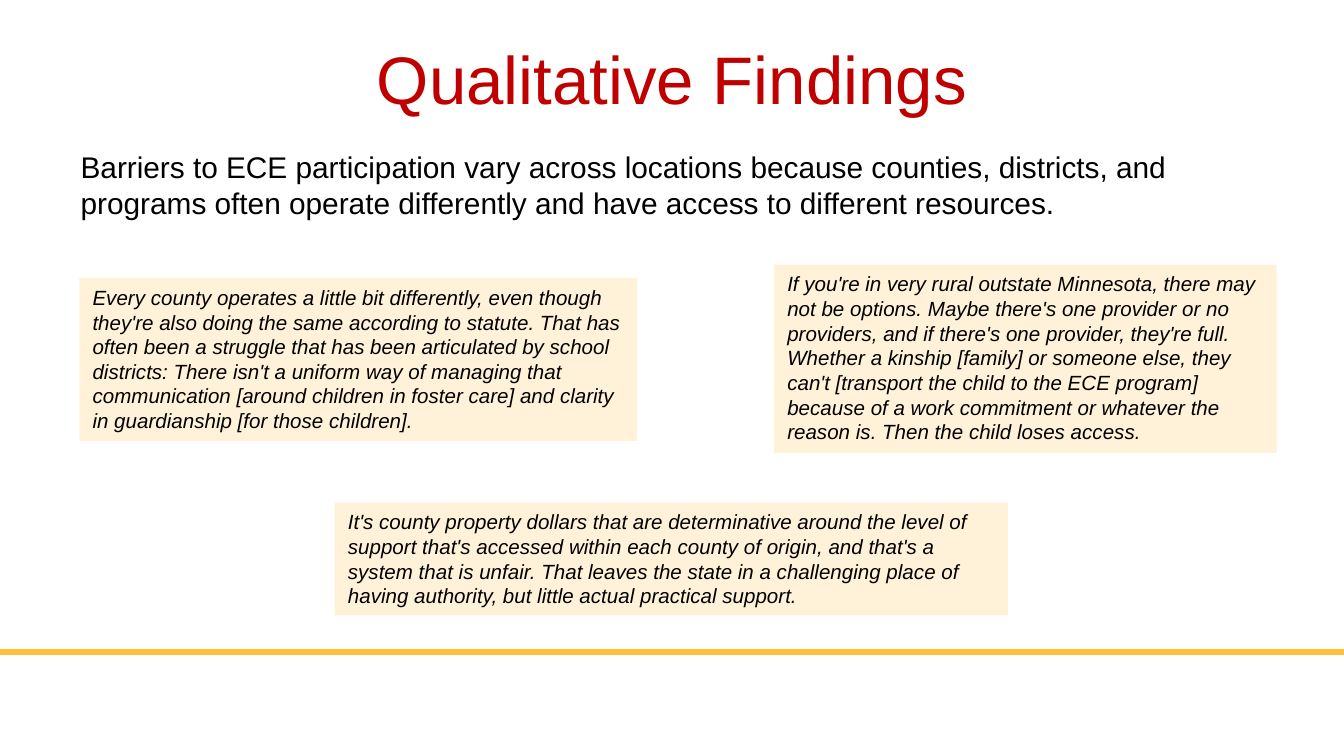
import dataclasses

import lxml.etree
import pptx
import pptx.dml.color
import pptx.enum.shapes
import pptx.enum.text
import pptx.oxml.ns
import pptx.util

Inches = pptx.util.Inches
RGBColor = pptx.dml.color.RGBColor
Align = pptx.enum.text.PP_ALIGN
qn = pptx.oxml.ns.qn

RED = RGBColor(0xC0, 0x00, 0x00)
BLACK = RGBColor(0x00, 0x00, 0x00)
CREAM = RGBColor(0xFF, 0xF2, 0xD8)
GOLD = RGBColor(0xFF, 0xBF, 0x3B)
FONT = "Arial"
WIDE = Inches(10)
HIGH = WIDE * 9 // 16


@dataclasses.dataclass
class Quote:
    left: float
    top: float
    width: float
    height: float
    text: str


QUOTES = [
    Quote(0.59, 2.07, 4.15, 1.21,
          "Every county operates a little bit differently, even though they're "
          "also doing the same according to statute. That has often been a "
          "struggle that has been articulated by school districts: There isn't "
          "a uniform way of managing that communication [around children in "
          "foster care] and clarity in guardianship [for those children]."),
    Quote(5.76, 1.97, 3.74, 1.4,
          "If you're in very rural outstate Minnesota, there may not be "
          "options. Maybe there's one provider or no providers, and if there's "
          "one provider, they're full. Whether a kinship [family] or someone "
          "else, they can't [transport the child to the ECE program] because "
          "of a work commitment or whatever the reason is. Then the child "
          "loses access."),
    Quote(2.49, 3.74, 5.01, 0.84,
          "It's county property dollars that are determinative around the "
          "level of support that's accessed within each county of origin, and "
          "that's a system that is unfair. That leaves the state in a "
          "challenging place of having authority, but little actual practical "
          "support."),
]


def place(shape, left: float, top: float, width: float, height: float) -> None:
    shape.left, shape.top = Inches(left), Inches(top)
    shape.width, shape.height = Inches(width), Inches(height)


def write(shape, text: str, size: float, color: RGBColor, align: Align,
          slant: bool = False) -> None:
    frame = shape.text_frame
    frame.word_wrap = True
    frame.vertical_anchor = pptx.enum.text.MSO_ANCHOR.TOP
    para = frame.paragraphs[0]
    para.alignment = align
    run = para.add_run()
    run.text = text
    run.font.name = FONT
    run.font.size = pptx.util.Pt(size)
    run.font.italic = slant
    run.font.color.rgb = color


def add_rule(slide, top: float) -> None:
    rule = slide.shapes.add_connector(
        pptx.enum.shapes.MSO_CONNECTOR.STRAIGHT,
        Inches(0), Inches(top), WIDE, Inches(top))
    rule.line.color.rgb = GOLD
    rule.line.width = pptx.util.Pt(3)
    lxml.etree.SubElement(rule._element.spPr, qn("a:effectLst"))


def add_quote(slide, quote: Quote) -> None:
    box = slide.shapes.add_shape(
        pptx.enum.shapes.MSO_SHAPE.RECTANGLE,
        Inches(quote.left), Inches(quote.top),
        Inches(quote.width), Inches(quote.height))
    box.shadow.inherit = False
    box.fill.solid()
    box.fill.fore_color.rgb = CREAM
    box.line.fill.background()
    write(box, quote.text, 11, BLACK, Align.LEFT, slant=True)
    box.text_frame.auto_size = pptx.enum.text.MSO_AUTO_SIZE.SHAPE_TO_FIT_TEXT


def main() -> None:
    deck = pptx.Presentation()
    deck.slide_width, deck.slide_height = WIDE, HIGH
    slide = deck.slides.add_slide(deck.slide_layouts[1])
    add_rule(slide, 4.85)

    title = slide.shapes.title
    place(title, 0.5, 0.23, 9, 0.94)
    write(title, "Qualitative Findings", 36, RED, Align.CENTER)

    body = slide.placeholders[1]
    place(body, 0.5, 1.06, 9, 3.5)
    props = body.text_frame.paragraphs[0]._p.get_or_add_pPr()
    props.set("marL", "0")
    props.set("indent", "0")
    lxml.etree.SubElement(props, qn("a:buNone"))
    write(body, "Barriers to ECE participation vary across locations because "
          "counties, districts, and programs often operate differently and "
          "have access to different resources.", 16, BLACK, Align.LEFT)

    for quote in QUOTES:
        add_quote(slide, quote)
    deck.save("out.pptx")


if __name__ == "__main__":
    main()
